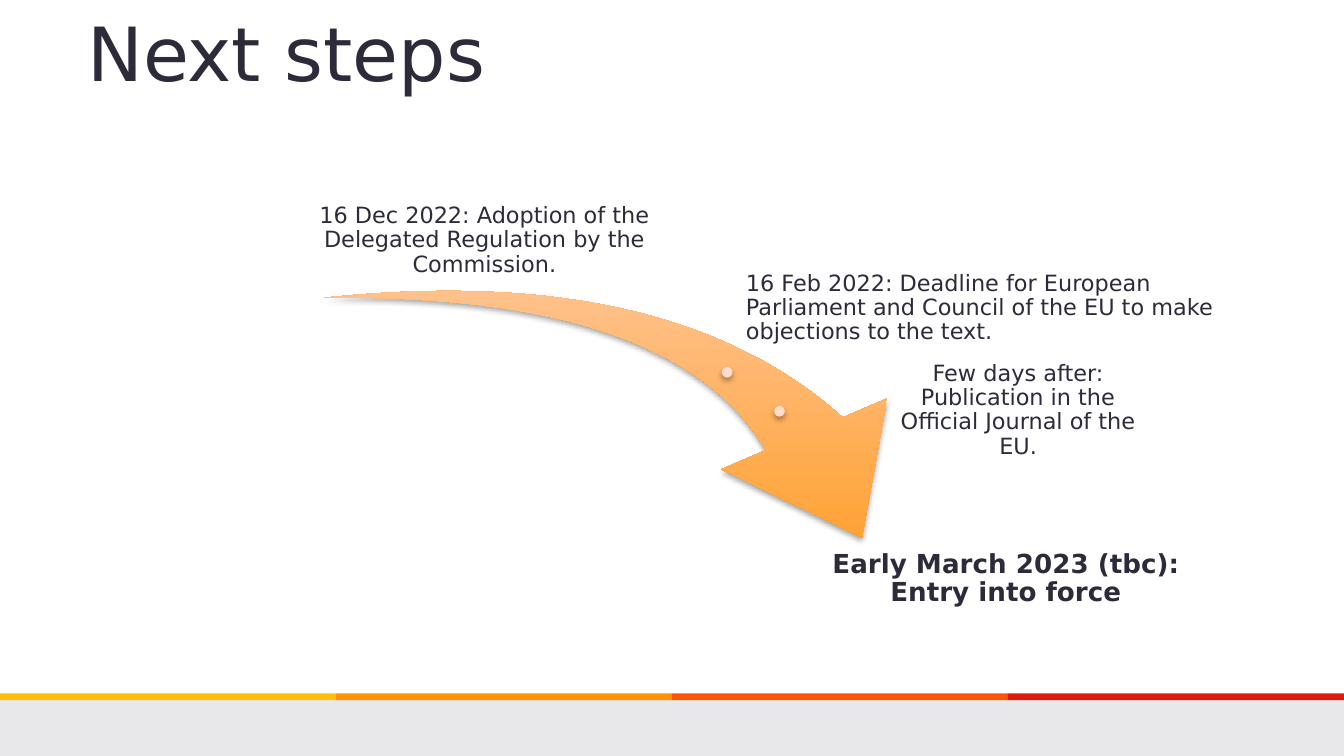
from lxml import etree
from pptx import Presentation
from pptx.dml.color import RGBColor
from pptx.enum.shapes import MSO_SHAPE
from pptx.enum.text import MSO_ANCHOR, PP_ALIGN
from pptx.oxml.ns import qn
from pptx.util import Inches, Pt

WIDTH = 10
HEIGHT = WIDTH * 9 / 16
FOOTER_TOP = 5.21
FONT = "DejaVu Sans"
INK = "2D2B3A"
DOT = "FFDCCC"
STRIPES = ["FDC00D", "FE9309", "FC5507", "DC1B0C"]


def rgb(color):
    return RGBColor.from_string(color)


def add_soft_shadow(sp):
    """Add a faint black shadow that falls straight down."""
    effects = sp._element.spPr.find(qn("a:effectLst"))
    shadow = etree.SubElement(
        effects, qn("a:outerShdw"), blurRad=str(Pt(3.1)), dist=str(Pt(1.8)),
        dir="5400000", rotWithShape="0")
    color = etree.SubElement(shadow, qn("a:srgbClr"), val="000000")
    etree.SubElement(color, qn("a:alpha"), val="35000")


class SlideBuilder:
    def __init__(self, prs):
        self.s = prs.slides.add_slide(prs.slide_layouts[5])

    def title(self, text, x, y, w, h):
        sp = self.s.shapes.title
        sp.left, sp.top, sp.width, sp.height = map(Inches, (x, y, w, h))
        tf = sp.text_frame
        tf.vertical_anchor = MSO_ANCHOR.TOP
        self.paragraph(tf, text, 40, PP_ALIGN.LEFT)

    def paragraph(self, tf, text, size, align, bold=False):
        tf.word_wrap = True
        p = tf.paragraphs[0]
        p.text = text
        p.alignment = align
        p.font.name, p.font.size, p.font.bold = FONT, Pt(size), bold
        p.font.color.rgb = rgb(INK)
        return p

    def shape(self, kind, x, y, w, h, fill, shadow=False):
        sp = self.s.shapes.add_shape(kind, *map(Inches, (x, y, w, h)))
        sp.line.fill.background()
        sp.fill.solid()
        sp.fill.fore_color.rgb = rgb(fill)
        sp.shadow.inherit = False
        if shadow:
            add_soft_shadow(sp)
        return sp

    def swoosh(self, x, y, w, h, rotation, adjustments, colors):
        """Add a curved arrow whose gradient runs upward on the slide."""
        sp = self.shape(MSO_SHAPE.SWOOSH_ARROW, x, y, w, h, colors[0], shadow=True)
        sp.rotation = rotation
        for i, value in enumerate(adjustments):
            sp.adjustments[i] = value
        sp.fill.gradient()
        sp.fill.gradient_angle = 90
        for stop, color in zip(sp.fill.gradient_stops, colors):
            stop.color.rgb = rgb(color)
        sp._element.spPr.find(qn("a:gradFill")).set("rotWithShape", "0")

    def label(self, text, x, y, w, h, anchor=MSO_ANCHOR.MIDDLE,
              align=PP_ALIGN.CENTER, size=12, bold=False):
        tf = self.s.shapes.add_textbox(*map(Inches, (x, y, w, h))).text_frame
        tf.margin_left = tf.margin_right = Inches(0.02)
        tf.margin_top = tf.margin_bottom = Inches(0.02)
        tf.vertical_anchor = anchor
        self.paragraph(tf, text, size, align, bold).line_spacing = 0.9


def main():
    prs = Presentation()
    prs.slide_width, prs.slide_height = Inches(WIDTH), Inches(HEIGHT)
    b = SlideBuilder(prs)

    b.shape(MSO_SHAPE.RECTANGLE, 0, FOOTER_TOP, WIDTH, HEIGHT - FOOTER_TOP,
            "E8E8EA", shadow=True)
    stripe_width = WIDTH / len(STRIPES)
    for i, color in enumerate(STRIPES):
        b.shape(MSO_SHAPE.RECTANGLE, stripe_width * i, FOOTER_TOP - 0.05,
                stripe_width, 0.05, color)
    b.title("Next steps", 0.55, 0, 8.5, 0.87)

    b.swoosh(3.21, 1.14, 2.86, 3.8, 73.3, (0.163, 0.314), ("FF9308", "FFD2BC"))
    for x, y in ((5.37, 2.73), (5.76, 3.02)):
        b.shape(MSO_SHAPE.OVAL, x, y, 0.08, 0.08, DOT, shadow=True)

    b.label("16 Dec 2022: Adoption of the Delegated Regulation by the Commission.",
            2.1, 1.47, 3.01, 0.61, anchor=MSO_ANCHOR.BOTTOM)
    b.label("16 Feb 2022: Deadline for European Parliament and Council of the EU "
            "to make objections to the text.",
            5.53, 1.99, 3.52, 0.61, align=PP_ALIGN.LEFT)
    b.label("Few days after: Publication in the Official Journal of the EU.",
            6.52, 2.75, 2.11, 0.61)
    b.label("Early March 2023 (tbc): Entry into force",
            6.15, 4.08, 2.67, 0.61, anchor=MSO_ANCHOR.TOP, size=14, bold=True)

    prs.save("out.pptx")


if __name__ == "__main__":
    main()
